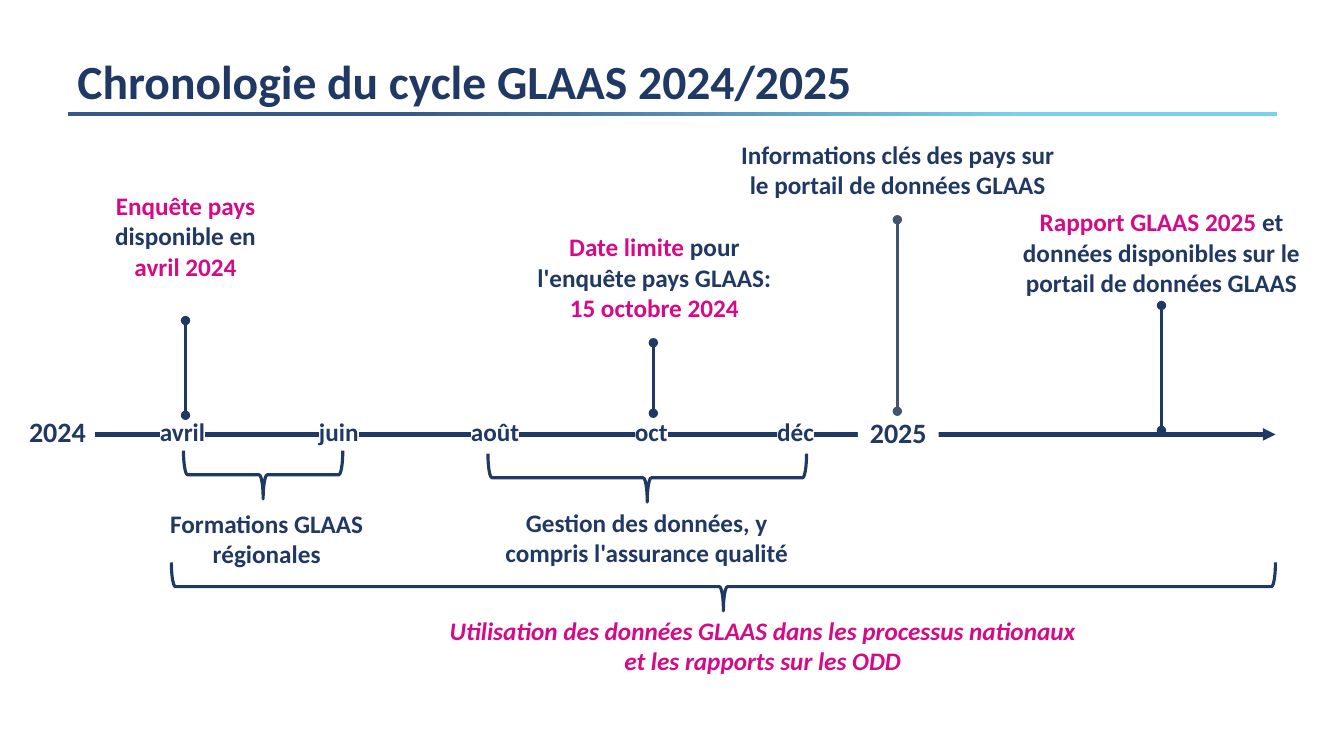
from dataclasses import dataclass

import pptx
import pptx.dml.color
import pptx.enum.dml
import pptx.enum.shapes
import pptx.enum.text
import pptx.oxml
import pptx.oxml.ns
import pptx.util
from pptx.util import Inches

SHAPES = pptx.enum.shapes.MSO_SHAPE
ALIGN = pptx.enum.text.PP_ALIGN
ANCHOR = pptx.enum.text.MSO_ANCHOR
DRAWING = pptx.oxml.ns.nsdecls("a")


@dataclass(frozen=True)
class Theme:
    font: str = "Calibri"
    navy: str = "203864"
    pink: str = "D60A87"
    slate: str = "44546A"
    white: str = "FFFFFF"
    rule_start: str = "375987"
    rule_end: str = "7BD0EF"
    title_size: float = 34
    year_size: float = 20
    label_size: float = 18
    stem_width: float = 2.25
    axis_width: float = 3


THEME = Theme()


@dataclass(frozen=True)
class Span:
    text: str
    color: str = THEME.navy
    italic: bool = False
    backing: str = ""


@dataclass(frozen=True)
class Label:
    left: float
    top: float
    width: float
    height: float
    paras: tuple[tuple[Span, ...], ...]
    size: float = THEME.label_size


@dataclass(frozen=True)
class Stem:
    x: float
    top: float
    bottom: float
    color: str = THEME.navy


@dataclass(frozen=True)
class Brace:
    left: float
    top: float
    width: float
    depth: float = 0.48


MONTHS = [
    Label(left, 4.08, 1.38, 0.4, ((Span(month, backing=THEME.white),),))
    for month, left in zip(
        ("avril", "juin", "août", "oct", "déc"),
        [1.12 + 1.55 * step for step in range(4)] + [7.2],
    )
]

LABELS = [
    Label(0.58, 1.84, 2.52, 1.01, (
        (Span("Enquête pays ", THEME.pink), Span("disponible en")),
        (Span("avril 2024", THEME.pink),),
    )),
    Label(5.14, 2.25, 2.7, 1.01, ((
        Span("Date limite ", THEME.pink),
        Span("pour l'enquête pays GLAAS: "),
        Span("15 octobre 2024", THEME.pink),
    ),)),
    Label(7.23, 1.33, 3.35, 0.71, ((
        Span("Informations clés des pays sur le portail de données GLAAS"),
    ),)),
    Label(9.88, 2, 3.28, 1.01, ((
        Span("Rapport GLAAS 2025 ", THEME.pink),
        Span("et données disponibles sur le portail de données GLAAS"),
    ),)),
    Label(1.15, 4.99, 2.99, 0.71, ((Span("Formations GLAAS régionales"),),)),
    Label(4.81, 4.98, 3.21, 0.71, ((
        Span("Gestion des données, y compris l'assurance qualité"),
    ),)),
    Label(4.36, 6.05, 6.41, 0.71, ((
        Span("Utilisation des données GLAAS dans les processus nationaux "
             "et les rapports sur les ODD", THEME.pink, True),
    ),)),
    Label(-0.02, 4.06, 1.18, 0.44, ((Span("2024"),),), THEME.year_size),
]

YEAR_2025 = Label(8.51, 4.07, 0.8, 0.44, ((Span("2025"),),), THEME.year_size)
TITLE = Label(0.67, 0.22, 12, 0.92,
              ((Span("Chronologie du cycle GLAAS 2024/2025"),),), THEME.title_size)

STEMS = [
    Stem(1.84, 3.18, 4.12),
    Stem(6.48, 3.4, 4.1),
    Stem(8.9, 2.18, 4.08, THEME.slate),
    Stem(11.52, 3.03, 4.27),
]

BRACES = [Brace(1.82, 4.47, 1.58), Brace(4.84, 4.5, 3.16), Brace(1.7, 5.58, 10.95)]


def rgb(color: str) -> pptx.dml.color.RGBColor:
    return pptx.dml.color.RGBColor.from_string(color)


def highlight(run, color: str) -> None:
    fill = run._r.get_or_add_rPr().find(pptx.oxml.ns.qn("a:solidFill"))
    fill.addnext(pptx.oxml.parse_xml(
        f"<a:highlight {DRAWING}><a:srgbClr val='{color}'/></a:highlight>"))


def write_text(box, label: Label, align=ALIGN.CENTER) -> None:
    frame = box.text_frame
    frame.word_wrap = True
    for index, spans in enumerate(label.paras):
        para = frame.add_paragraph() if index else frame.paragraphs[0]
        para.alignment = align
        for span in spans:
            run = para.add_run()
            run.text = span.text
            run.font.name = THEME.font
            run.font.size = pptx.util.Pt(label.size)
            run.font.bold = True
            if span.italic:
                run.font.italic = True
            run.font.color.rgb = rgb(span.color)
            if span.backing:
                highlight(run, span.backing)


def frame_of(label: Label) -> list[pptx.util.Length]:
    return [Inches(side) for side in (label.left, label.top, label.width, label.height)]


def add_label(page, label: Label) -> None:
    box = page.shapes.add_textbox(*frame_of(label))
    write_text(box, label)
    box.text_frame.auto_size = pptx.enum.text.MSO_AUTO_SIZE.SHAPE_TO_FIT_TEXT


def add_title(page, label: Label) -> None:
    box = page.shapes.add_textbox(*frame_of(label))
    write_text(box, label, ALIGN.LEFT)
    box.text_frame.vertical_anchor = ANCHOR.BOTTOM
    box.text_frame.paragraphs[0].line_spacing = 0.9


def add_rule(page) -> None:
    rule = page.shapes.add_shape(
        SHAPES.RECTANGLE, Inches(0.67), Inches(1.11), Inches(12), Inches(0.04))
    rule.shadow.inherit = False
    rule.line.fill.background()
    rule.fill.gradient()
    rule.fill.gradient_angle = 0
    stops = ((0.28, THEME.rule_start), (0.79, THEME.rule_end))
    for stop, (position, color) in zip(rule.fill.gradient_stops, stops):
        stop.position = position
        stop.color.rgb = rgb(color)


def add_year_plate(page, label: Label) -> None:
    plate = page.shapes.add_shape(SHAPES.RECTANGLE, *frame_of(label))
    plate.shadow.inherit = False
    plate.fill.solid()
    plate.fill.fore_color.rgb = rgb(THEME.white)
    plate.line.fill.background()
    write_text(plate, label)
    plate.text_frame.vertical_anchor = ANCHOR.TOP


def add_line(page, start: tuple[float, float], end: tuple[float, float],
             color: str, width: float, ends: dict[str, str]) -> None:
    line = page.shapes.add_connector(
        pptx.enum.shapes.MSO_CONNECTOR.STRAIGHT, *map(Inches, start + end))
    line.line.color.rgb = rgb(color)
    line.line.width = pptx.util.Pt(width)
    outline = line.line._get_or_add_ln()
    for tag, kind in ends.items():
        outline.append(pptx.oxml.parse_xml(f"<a:{tag} {DRAWING} type='{kind}'/>"))
    line._element.spPr.append(pptx.oxml.parse_xml(f"<a:effectLst {DRAWING}/>"))


def add_brace(page, brace: Brace) -> None:
    left = brace.left + (brace.width - brace.depth) / 2
    top = brace.top + (brace.depth - brace.width) / 2
    shape = page.shapes.add_shape(
        SHAPES.LEFT_BRACE, Inches(left), Inches(top), Inches(brace.depth), Inches(brace.width))
    shape.rotation = 270
    shape.shadow.inherit = False
    shape.fill.background()
    shape.line.color.rgb = rgb(THEME.navy)
    shape.line.width = pptx.util.Pt(THEME.stem_width)


def main() -> None:
    deck = pptx.Presentation()
    deck.slide_width, deck.slide_height = Inches(13.33), Inches(7.5)
    page = deck.slides.add_slide(deck.slide_layouts[6])
    add_rule(page)
    add_title(page, TITLE)
    add_line(page, (0.94, 4.31), (12.65, 4.31), THEME.navy, THEME.axis_width,
             {"tailEnd": "triangle"})
    for label in MONTHS + LABELS:
        add_label(page, label)
    add_year_plate(page, YEAR_2025)
    for stem in STEMS:
        add_line(page, (stem.x, stem.top), (stem.x, stem.bottom), stem.color,
                 THEME.stem_width, {"headEnd": "oval", "tailEnd": "oval"})
    for brace in BRACES:
        add_brace(page, brace)
    deck.save("out.pptx")


if __name__ == "__main__":
    main()
